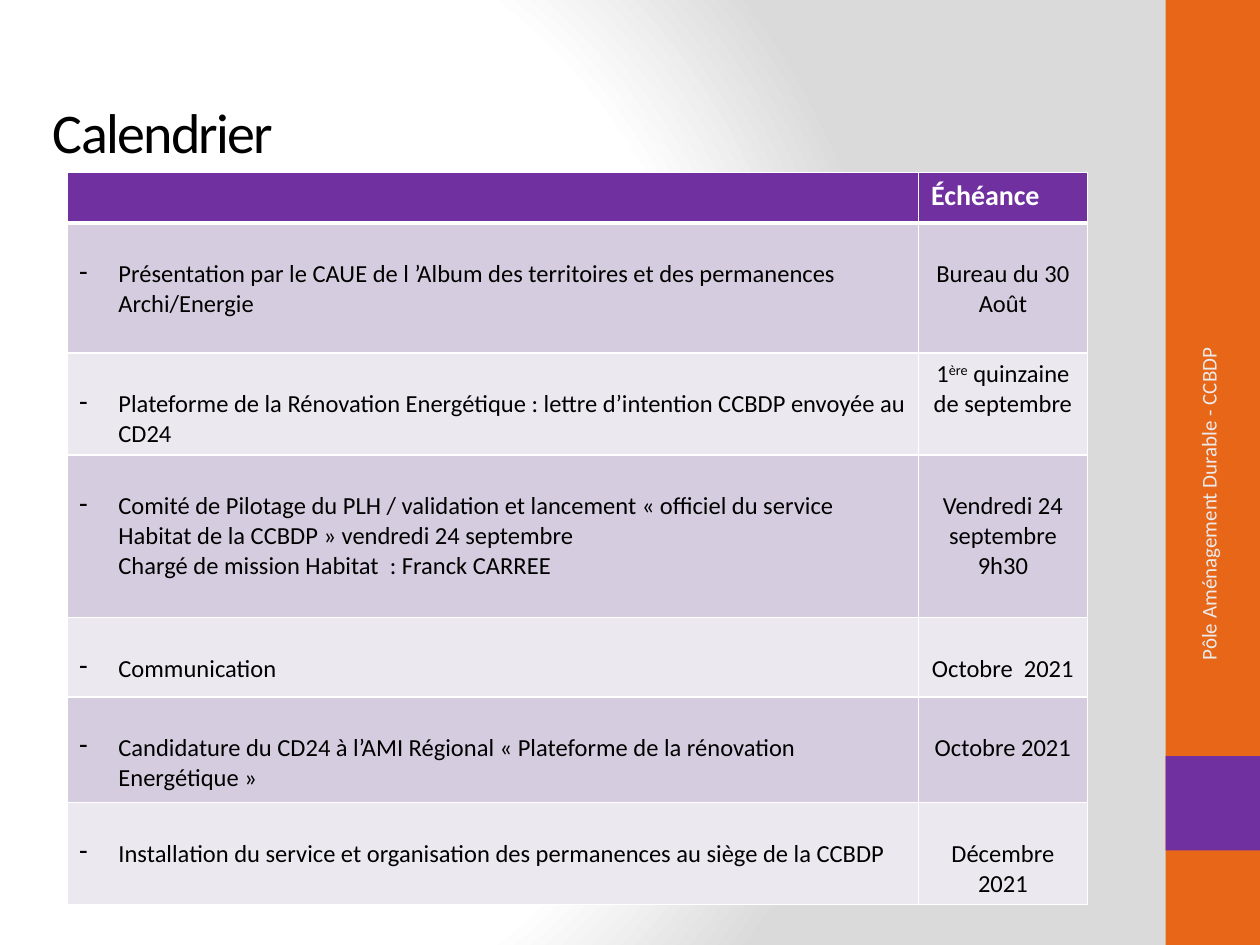
from dataclasses import dataclass

from lxml import etree
from pptx import Presentation
from pptx.dml.color import RGBColor
from pptx.enum.shapes import MSO_SHAPE
from pptx.enum.text import MSO_ANCHOR, PP_ALIGN
from pptx.oxml import parse_xml
from pptx.oxml.ns import nsdecls, qn
from pptx.util import Inches, Pt

RECTANGLE = MSO_SHAPE.RECTANGLE
MIDDLE = MSO_ANCHOR.MIDDLE
LEFT, CENTER, RIGHT = PP_ALIGN.LEFT, PP_ALIGN.CENTER, PP_ALIGN.RIGHT
TITLE_ONLY = 5


@dataclass(frozen=True)
class Theme:
    """Colours, font and type sizes of the slide."""
    font: str = "Calibri"
    orange: str = "E76618"
    purple: str = "7030A0"
    bands: tuple = ("D5CDDF", "EBE8F0")
    white: str = "FFFFFF"
    grey: str = "DADADA"
    black: str = "000000"
    pale: str = "EBEBEB"
    title_size: int = 32
    header_size: int = 16
    body_size: int = 14
    side_size: int = 12


THEME = Theme()
COLUMN_WIDTHS = (6.76, 1.34)
HEADER_HEIGHT = 0.37
LINE_DOWN = 0.29
TOP = 0.05
HANGING = 0.31

# Height, tasks (text, bulleted), due runs (text, raised), top margin of the due cell
MILESTONES = [
    (1.03, [("Présentation par le CAUE de l ’Album des territoires et des "
             "permanences Archi/Energie", True)],
     [("Bureau du 30 Août", False)], LINE_DOWN),
    (0.81, [("Plateforme de la Rénovation Energétique : lettre d’intention "
             "CCBDP envoyée au CD24", True)],
     [("1", False), ("ère", True), (" quinzaine de septembre", False)], TOP),
    (1.29, [("Comité de Pilotage du PLH / validation et lancement « officiel du "
             "service Habitat de la CCBDP » vendredi 24 septembre", True),
            ("Chargé de mission Habitat  : Franck CARREE", False)],
     [("Vendredi 24 septembre 9h30", False)], LINE_DOWN),
    (0.63, [("Communication", True)], [("Octobre  2021", False)], LINE_DOWN),
    (0.84, [("Candidature du CD24 à l’AMI Régional « Plateforme de la "
             "rénovation Energétique »", True)],
     [("Octobre 2021", False)], LINE_DOWN),
    (0.81, [("Installation du service et organisation des permanences au siège "
             "de la CCBDP", True)],
     [("Décembre 2021", False)], LINE_DOWN),
]


def add_run(paragraph, text, size, color, bold=False):
    """Append a formatted run and return it."""
    run = paragraph.add_run()
    run.text = text
    run.font.name = THEME.font
    run.font.size = Pt(size)
    run.font.bold = bold
    run.font.color.rgb = RGBColor.from_string(color)
    return run


def set_background(slide):
    """Give the slide a radial gradient from white to grey."""
    fill = slide.background.fill
    fill.solid()
    solid = slide.element.cSld.find(".//" + qn("a:solidFill"))
    stops = "".join(
        f'<a:gs pos="{percent * 1000}"><a:srgbClr val="{color}"/></a:gs>'
        for percent, color in ((0, THEME.white), (75, THEME.white), (100, THEME.grey)))
    gradient = parse_xml(
        f'<a:gradFill {nsdecls("a")} rotWithShape="1"><a:gsLst>{stops}</a:gsLst>'
        '<a:path path="circle"><a:fillToRect l="20000" t="50000" r="100000" b="50000"/>'
        '</a:path></a:gradFill>')
    solid.getparent().replace(solid, gradient)


def add_block(slide, color, left, top, width, height):
    """Add a plain filled rectangle."""
    block = slide.shapes.add_shape(
        RECTANGLE, Inches(left), Inches(top), Inches(width), Inches(height))
    block.shadow.inherit = False
    block.fill.solid()
    block.fill.fore_color.rgb = RGBColor.from_string(color)
    block.line.fill.background()


def add_side_band(slide, left, top, width, height):
    """Add the orange band with its purple square and upright department name."""
    add_block(slide, THEME.orange, left, top, width, height)
    add_block(slide, THEME.purple, left, top + height - 2 * width, width, width)
    length, thickness = 3.26, 0.4
    department = slide.shapes.add_textbox(
        Inches(left - 1.29), Inches(top + 4.09), Inches(length), Inches(thickness))
    department.rotation = 270
    frame = department.text_frame
    frame.word_wrap = True
    frame.vertical_anchor = MIDDLE
    frame.paragraphs[0].alignment = RIGHT
    add_run(frame.paragraphs[0], "Pôle Aménagement Durable - CCBDP",
            THEME.side_size, THEME.pale)


def place_title(slide, left, top, width, height):
    """Move and format the title placeholder."""
    title = slide.shapes.title
    title.left, title.top = Inches(left), Inches(top)
    title.width, title.height = Inches(width), Inches(height)
    title.text_frame.vertical_anchor = MIDDLE
    heading = title.text_frame.paragraphs[0]
    heading.alignment = LEFT
    run = add_run(heading, "Calendrier", THEME.title_size, THEME.black)
    run.font._element.set("spc", "-100")


def style_cell(cell, color, bottom=1):
    """Fill a cell and draw its white borders."""
    properties = cell._tc.get_or_add_tcPr()
    for side, points in (("L", 1), ("R", 1), ("T", 1), ("B", bottom)):
        line = etree.SubElement(properties, qn(f"a:ln{side}"), w=str(Pt(points)))
        solid = etree.SubElement(line, qn("a:solidFill"))
        etree.SubElement(solid, qn("a:srgbClr"), val=THEME.white)
    cell.fill.solid()
    cell.fill.fore_color.rgb = RGBColor.from_string(color)


def write_tasks(cell, tasks):
    """Write the tasks of a milestone with hanging dashes."""
    cell.margin_top = Inches(LINE_DOWN)
    for index, (text, bulleted) in enumerate(tasks):
        frame = cell.text_frame
        task = frame.add_paragraph() if index else frame.paragraphs[0]
        properties = task._p.get_or_add_pPr()
        properties.set("marL", str(Inches(HANGING)))
        if bulleted:
            properties.set("indent", str(-Inches(HANGING)))
            etree.SubElement(properties, qn("a:buChar"), char="-")
        add_run(task, text, THEME.body_size, THEME.black)


def write_due(cell, runs, margin):
    """Write the due date of a milestone, centred."""
    cell.margin_top = Inches(margin)
    due = cell.text_frame.paragraphs[0]
    due.alignment = CENTER
    for text, raised in runs:
        run = add_run(due, text, THEME.body_size, THEME.black)
        if raised:
            run.font._element.set("baseline", "30000")


def add_calendar(slide, left, top, width, height):
    """Add the table of milestones and due dates."""
    calendar = slide.shapes.add_table(
        len(MILESTONES) + 1, len(COLUMN_WIDTHS),
        Inches(left), Inches(top), Inches(width), Inches(height)).table
    for column, column_width in zip(calendar.columns, COLUMN_WIDTHS):
        column.width = Inches(column_width)
    calendar.rows[0].height = Inches(HEADER_HEIGHT)
    for header in calendar.rows[0].cells:
        style_cell(header, THEME.purple, bottom=3)
    add_run(calendar.cell(0, 1).text_frame.paragraphs[0], "Échéance",
            THEME.header_size, THEME.white, bold=True)
    for index, (row_height, tasks, due, margin) in enumerate(MILESTONES):
        row = calendar.rows[index + 1]
        row.height = Inches(row_height)
        for cell in row.cells:
            style_cell(cell, THEME.bands[index % 2])
        write_tasks(row.cells[0], tasks)
        write_due(row.cells[1], due, margin)


def main():
    """Build the calendar slide and save it."""
    deck = Presentation()
    deck.slide_width, deck.slide_height = Inches(10), Inches(7.5)
    slide = deck.slides.add_slide(deck.slide_layouts[TITLE_ONLY])
    set_background(slide)
    add_side_band(slide, 9.25, 0, 0.75, 7.5)
    place_title(slide, 0.32, 0.67, 8.85, 0.74)
    add_calendar(slide, 0.53, 1.37, sum(COLUMN_WIDTHS),
                 HEADER_HEIGHT + sum(milestone[0] for milestone in MILESTONES))
    deck.save("out.pptx")


if __name__ == "__main__":
    main()
